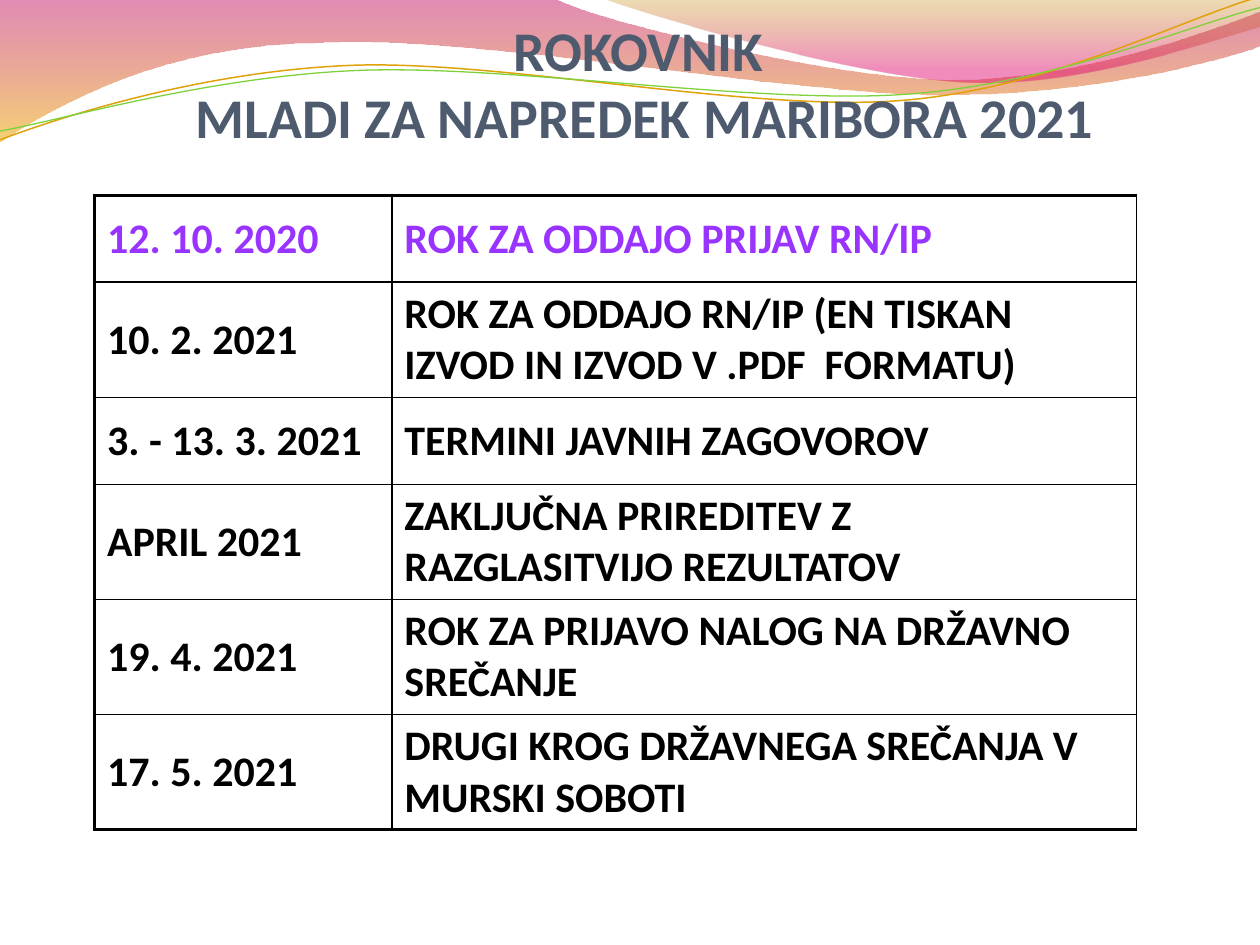
"""Build the timetable slide with wave decoration, a title and a table of deadlines."""
from lxml import etree
from pptx import Presentation, util as u
from pptx.dml.color import RGBColor
from pptx.enum import text
from pptx.oxml.ns import qn

rgb = RGBColor.from_string


def write(p, words, size=24, color="000000", align=None):
    p.alignment = align
    r = p.add_run()
    r.text = words
    r.font.name, r.font.size, r.font.bold = "Calibri", u.Pt(size), True
    r.font.color.rgb = rgb(color)


def trace(s, start, segments, close):
    points = [(u.Inches(x), u.Inches(y)) for seg in [[start], *segments] for x, y in seg]
    builder = s.shapes.build_freeform(*points[0])
    builder.add_line_segments(points[1:], close=close)
    sp = builder.convert_to_shape()
    sp.shadow.inherit = False
    steps = iter(list(sp.element.iter(qn("a:lnTo"))))
    for seg in segments:
        first, *others = [next(steps) for _ in seg]
        if others:
            curve = etree.Element(qn("a:cubicBezTo"))
            first.addprevious(curve)
            for step in (first, *others):
                curve.append(step[0])
                step.getparent().remove(step)
    return sp


prs = Presentation()
prs.slide_width, prs.slide_height = u.Inches(10), u.Inches(7.5)
W, H = prs.slide_width, prs.slide_height
s = prs.slides.add_slide(prs.slide_layouts[5])

bands = [
    ((0, -0.01), [[(4.4, -0.01)],
                  [(4.76, 0.17), (6.64, 0.63), (7.58, 0.63)],
                  [(8.53, 0.63), (9.58, 0.26), (10, 0.09)],
                  [(10.01, 0.36)],
                  [(9.83, 0.44), (8.7, 0.76), (7.46, 0.75)],
                  [(6.22, 0.75), (3.82, 0.28), (2.57, 0.34)],
                  [(1.29, 0.35), (0.46, 0.83), (-0.01, 1.13)]],
     [("BD0059", 0, 45), ("F0AB00", 1, 55)]),
    ((4.79, -0.01), [[(5.09, 0.11), (6.82, 0.62), (7.69, 0.65)],
                     [(8.56, 0.69), (9.61, 0.32), (10, 0.21)],
                     [(10, 0)]],
     [("C38B00", 0, 30), ("E1006B", 0.8, 45)]),
]
for start, segments, stops in bands:
    sp = trace(s, start, segments, True)
    sp.line.fill.background()
    sp.fill.gradient()
    sp.fill.gradient_angle = 270
    for stop, (color, position, _) in zip(sp.fill.gradient_stops, stops):
        stop.color.rgb, stop.position = rgb(color), position
    for clr, (_, _, opacity) in zip(sp.element.iter(qn("a:srgbClr")), stops):
        etree.SubElement(clr, qn("a:alpha"), val=str(opacity * 1000))

waves = [
    ((0, 1.11), [[(0.48, 0.93), (1.58, 0.57), (2.77, 0.52)],
                 [(3.95, 0.47), (5.93, 0.89), (7.13, 0.8)],
                 [(8.33, 0.71), (9.38, 0.15), (9.98, -0.02)]], "E0A209", 0.85),
    ((0, 1.04), [[(0.47, 0.96), (1.64, 0.61), (2.83, 0.56)],
                 [(4.03, 0.51), (5.97, 0.83), (7.17, 0.75)],
                 [(8.36, 0.67), (9.41, 0.21), (10, 0.06)]], "7FD13B", 0.75),
]
for start, segments, color, width in waves:
    sp = trace(s, start, segments, False)
    sp.fill.background()
    sp.line.color.rgb, sp.line.width = rgb(color), u.Pt(width)

rows = [
    ("12. 10. 2020", "ROK ZA ODDAJO PRIJAV RN/IP"),
    ("10. 2. 2021", "ROK ZA ODDAJO RN/IP (EN TISKAN IZVOD IN IZVOD V .PDF  FORMATU)"),
    ("3. - 13. 3. 2021", "TERMINI JAVNIH ZAGOVOROV"),
    ("APRIL 2021", "ZAKLJUČNA PRIREDITEV Z RAZGLASITVIJO REZULTATOV"),
    ("19. 4. 2021", "ROK ZA PRIJAVO NALOG NA DRŽAVNO SREČANJE"),
    ("17. 5. 2021", "DRUGI KROG DRŽAVNEGA SREČANJA V MURSKI SOBOTI"),
]
row_height = u.Inches(0.69)
table = s.shapes.add_table(len(rows), 2, u.Inches(0.75), u.Inches(1.55),
                           u.Inches(8.27), row_height * len(rows)).table
table.first_row = table.horz_banding = False
for column, width in zip(table.columns, (2.36, 5.91)):
    column.width = u.Inches(width)
for i, row in enumerate(rows):
    table.rows[i].height = row_height
    for j, words in enumerate(row):
        cell = table.cell(i, j)
        cell.vertical_anchor = text.MSO_ANCHOR.MIDDLE
        write(cell.text_frame.paragraphs[0], words, color="000000" if i else "9933FF")
        cell.fill.background()
        tc_pr = cell._tc.get_or_add_tcPr()
        thick = {"L": j == 0, "R": False, "T": i == 0, "B": i == len(rows) - 1}
        for k, (side, heavy) in enumerate(thick.items()):
            ln = etree.Element(qn(f"a:ln{side}"), w=str(u.Pt(2.25 if heavy else 1)))
            fill = etree.SubElement(ln, qn("a:solidFill"))
            etree.SubElement(fill, qn("a:srgbClr"), val="000000")
            tc_pr.insert(k, ln)

title = s.shapes.title
s.shapes.element.append(title.element)
title.left, title.top = u.Inches(0.67), u.Inches(0.44)
title.width, title.height = u.Inches(8.9), u.Inches(0.43)
tf = title.text_frame
tf.word_wrap, tf.auto_size = True, text.MSO_AUTO_SIZE.NONE
tf.vertical_anchor = text.MSO_ANCHOR.MIDDLE
for p, words in ((tf.paragraphs[0], "ROKOVNIK "),
                 (tf.add_paragraph(), "MLADI ZA NAPREDEK MARIBORA 2021")):
    write(p, words, size=32, color="4E5B6F", align=text.PP_ALIGN.CENTER)

prs.save("out.pptx")
